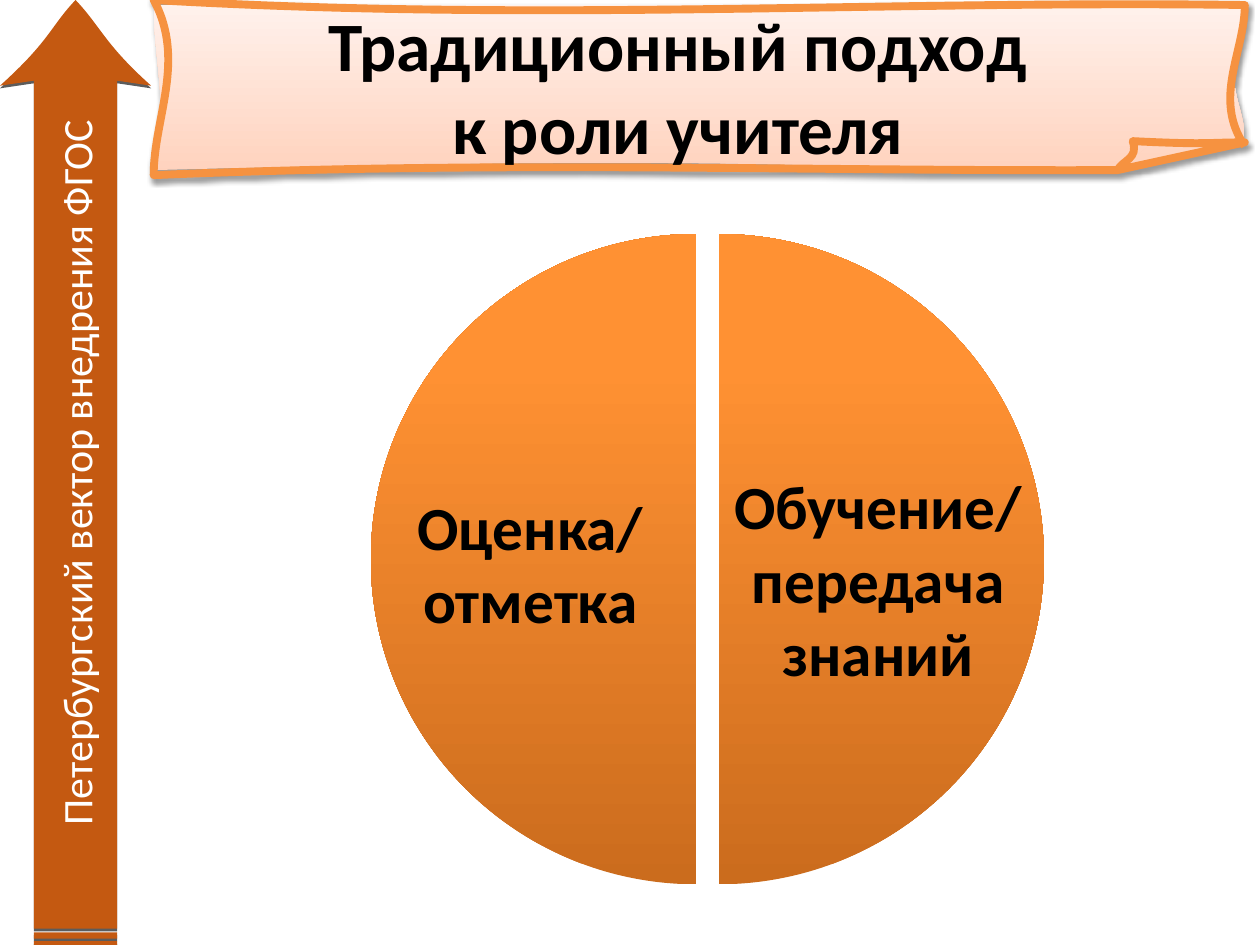
from dataclasses import dataclass

import lxml.etree
import pptx
import pptx.chart.data
import pptx.enum.chart
import pptx.enum.text
import pptx.oxml
import pptx.oxml.ns
from pptx.dml.color import RGBColor
from pptx.util import Inches, Pt


@dataclass(frozen=True)
class Theme:
    font: str = "Calibri"
    dark: str = "000000"
    light: str = "FFFFFF"
    arrow: str = "C45911"
    banner_line: str = "F69240"
    banner: tuple = ((0, "FFD2BD"), (1, "FFF2ED"))
    pie: tuple = ((0, "CB6C1D"), (0.8, "FF9133"))
    title_size: float = 39.6
    label_size: float = 35
    arrow_size: float = 24


THEME = Theme()
WIDTH, HEIGHT = 10, 7.5
UNITS = 1000  # outline units in one inch

# Content
TITLE = "Традиционный подход\vк роли учителя"
ARROW_TEXT = "Петербургский вектор внедрения ФГОС"
SECTORS = [("1", 50, 7), ("2", 50, 0)]  # name, value, explosion
EXPLOSION = 11
PLOT_AREA = {"x": 0.212, "y": 0.004, "w": 0.637, "h": 0.963}
LABELS = [
    ("Оценка/\vотметка", (2.95, 3.83, 2.52, 1.28)),
    ("Обучение/\vпередача знаний", (5.71, 3.67, 2.52, 1.87)),
]

# Outlines: two numbers are a line's end, six numbers are a cubic curve
BANNER_BODY = [(1.22, 0.04), (9.88, 0.04), (9.68, 0.75, 9.88, 0.77, 9.88, 1.13),
               (9.26, 1.21, 9.47, 1.27, 8.87, 1.35),
               (6.32, 1.35, 6.22, 1.22, 1.22, 1.35),
               (1.35, 0.9, 1.22, 0.48, 1.22, 0.04)]
BANNER_FOLD = [(8.87, 1.35), (9.17, 1.12), (9.88, 1.13), (8.87, 1.35)]
BANNER_EDGE = [(8.87, 1.35), (8.91, 1.27, 9.04, 1.26, 8.99, 1.12),
               (9.59, 1.15, 9.58, 1.13, 9.88, 1.13), (8.87, 1.35),
               (6.32, 1.36, 3.99, 1.27, 1.22, 1.39),
               (1.22, 0.94, 1.48, 0.48, 1.22, 0),
               (4.31, 0.18, 6.99, 0, 9.88, 0.04),
               (9.88, 0.41, 9.62, 0.78, 9.88, 1.16)]
ARROW_WIDTH, SHAFT_LEFT, SHAFT_RIGHT = 1.2, 0.27, 0.93
STRIPES = [(7.47, 7.5), (7.4, 7.45)]
ARROW_BODY = [(SHAFT_LEFT, 7.37), (SHAFT_LEFT, 0.64), (0, 0.68),
              (0.4, 0.32, 0.4, 0.21, 0.6, 0), (0.8, 0.21, 0.83, 0.35, 1.2, 0.68),
              (SHAFT_RIGHT, 0.64), (SHAFT_RIGHT, 7.37)]

qn, nsdecls = pptx.oxml.ns.qn, pptx.oxml.ns.nsdecls


def pairs(segment):
    return list(zip(segment[::2], segment[1::2]))


def add_outline(slide, contours, open_last=False):
    """Draw contours; the points of each curve become one cubic segment."""
    builder = slide.shapes.build_freeform(
        *(UNITS * value for value in contours[0][0]), scale=Inches(1) / UNITS)
    for index, contour in enumerate(contours):
        points = [(UNITS * x, UNITS * y) for segment in contour for x, y in pairs(segment)]
        if index:
            builder.move_to(*points[0])
        is_open = open_last and index == len(contours) - 1
        builder.add_line_segments(points[1:], close=not is_open)
    shape = builder.convert_to_shape()
    shape.shadow.inherit = False

    nodes = iter(list(shape.element.spPr.find(".//" + qn("a:path"))))
    for contour in contours:
        for segment in contour:
            node = next(nodes)
            while node.tag == qn("a:close"):
                node = next(nodes)
            if len(segment) == 6:
                node.tag = qn("a:cubicBezTo")
                for _ in range(2):
                    extra = next(nodes)
                    node.append(extra[0])
                    extra.getparent().remove(extra)
    return shape


def split_paths(shape, settings):
    """Give each contour its own path with its own fill and stroke."""
    whole = shape.element.spPr.find(".//" + qn("a:path"))
    size = {key: whole.get(key) for key in ("w", "h")}
    settings = iter(settings)
    for node in list(whole):
        if node.tag == qn("a:moveTo"):
            part = lxml.etree.SubElement(whole.getparent(), qn("a:path"),
                                         {**size, **next(settings)})
        part.append(node)
    whole.getparent().remove(whole)


def add_shadow(shape, alpha, blur, distance):
    effects = shape.element.spPr.find(qn("a:effectLst"))
    effects.append(pptx.oxml.parse_xml(
        f'<a:outerShdw {nsdecls("a")} blurRad="{Pt(blur)}" '
        f'dist="{Pt(distance)}" dir="5400000" rotWithShape="0">'
        f'<a:srgbClr val="{THEME.dark}"><a:alpha val="{alpha * 1000}"/></a:srgbClr>'
        '</a:outerShdw>'))


def fill_gradient(fill, stops):
    fill.gradient()
    fill.gradient_angle = 90
    for stop, (position, color) in zip(fill.gradient_stops, stops):
        stop.position = position
        stop.color.rgb = RGBColor.from_string(color)


def write(shape, text, size, color, bold=False):
    frame = shape.text_frame
    frame.word_wrap = True
    frame.text = text
    paragraph = frame.paragraphs[0]
    paragraph.alignment = pptx.enum.text.PP_ALIGN.CENTER
    paragraph.font.name = THEME.font
    paragraph.font.size = Pt(size)
    paragraph.font.bold = bold
    paragraph.font.color.rgb = RGBColor.from_string(color)
    return frame


def add_banner(slide):
    banner = add_outline(slide, [BANNER_BODY, BANNER_FOLD, BANNER_EDGE], open_last=True)
    split_paths(banner, [{"stroke": "0"}, {"stroke": "0"}, {"fill": "none"}])
    fill_gradient(banner.fill, THEME.banner)
    banner.line.color.rgb = RGBColor.from_string(THEME.banner_line)
    banner.line.width = Pt(4.5)
    add_shadow(banner, 38, 3.1, 1.6)

    # The title lies on top of the banner
    title = slide.shapes.title
    banner.element.addnext(title.element)
    title.left, title.top, title.width, title.height = map(Inches, (0.88, 0.05, 9, 1.25))
    frame = write(title, TITLE, THEME.title_size, THEME.dark, bold=True)
    frame.auto_size = pptx.enum.text.MSO_AUTO_SIZE.NONE
    frame.vertical_anchor = pptx.enum.text.MSO_ANCHOR.MIDDLE


def explosion(percent):
    return pptx.oxml.parse_xml(f'<c:explosion {nsdecls("c")} val="{percent}"/>')


def add_pie(slide):
    data = pptx.chart.data.CategoryChartData()
    data.categories = [name for name, _, _ in SECTORS]
    data.add_series("Series 1", [value for _, value, _ in SECTORS])
    chart = slide.shapes.add_chart(
        pptx.enum.chart.XL_CHART_TYPE.PIE, *map(Inches, (0.75, 1.55, 9, 5.95)), data).chart
    chart.has_title = chart.has_legend = False
    chart.font.name, chart.font.size = THEME.font, Pt(18)
    chart.font.color.rgb = RGBColor.from_string(THEME.dark)
    plot = chart.plots[0]
    plot.vary_by_categories = False

    # Fix the plot area
    area = chart._chartSpace.find(".//" + qn("c:plotArea"))
    for layout in area.findall(qn("c:layout")):
        area.remove(layout)
    places = "".join(f'<c:{key} val="{share}"/>' for key, share in PLOT_AREA.items())
    area.insert(0, pptx.oxml.parse_xml(
        f'<c:layout {nsdecls("c")}><c:manualLayout><c:layoutTarget val="inner"/>'
        f'<c:xMode val="edge"/><c:yMode val="edge"/>{places}</c:manualLayout></c:layout>'))

    # Colour the sectors and pull them apart
    series = plot.series[0]
    series._element.find(qn("c:tx")).addnext(explosion(EXPLOSION))
    for index, (_, _, percent) in enumerate(SECTORS):
        sector = series.points[index].format
        fill_gradient(sector.fill, THEME.pie)
        sector.line.fill.background()
        point = series._element.findall(qn("c:dPt"))[index]
        point.find(qn("c:spPr")).addprevious(explosion(percent))


def add_arrow(slide):
    # Drawn lying on its side, then turned upright about its centre
    stripes = [[(SHAFT_LEFT, bottom), (SHAFT_LEFT, top), (SHAFT_RIGHT, top),
                (SHAFT_RIGHT, bottom)] for top, bottom in STRIPES]
    shift = (HEIGHT - ARROW_WIDTH) / 2
    contours = [[tuple(value for x, y in pairs(segment)
                       for value in (HEIGHT - y - shift, x + shift))
                 for segment in outline] for outline in stripes + [ARROW_BODY]]
    arrow = add_outline(slide, contours)
    arrow.rotation = 270
    arrow.fill.solid()
    arrow.fill.fore_color.rgb = RGBColor.from_string(THEME.arrow)
    arrow.line.fill.background()
    add_shadow(arrow, 63, 0, 1.5)
    frame = write(arrow, ARROW_TEXT, THEME.arrow_size, THEME.light)
    frame.vertical_anchor = pptx.enum.text.MSO_ANCHOR.MIDDLE


def main():
    presentation = pptx.Presentation()
    presentation.slide_width, presentation.slide_height = Inches(WIDTH), Inches(HEIGHT)
    slide = presentation.slides.add_slide(presentation.slide_layouts[5])
    add_banner(slide)
    add_pie(slide)
    add_arrow(slide)

    # Sector labels
    for text, place in LABELS:
        label = slide.shapes.add_textbox(*map(Inches, place))
        frame = write(label, text, THEME.label_size, THEME.dark, bold=True)
        frame.auto_size = pptx.enum.text.MSO_AUTO_SIZE.SHAPE_TO_FIT_TEXT
    presentation.save("out.pptx")


if __name__ == "__main__":
    main()
